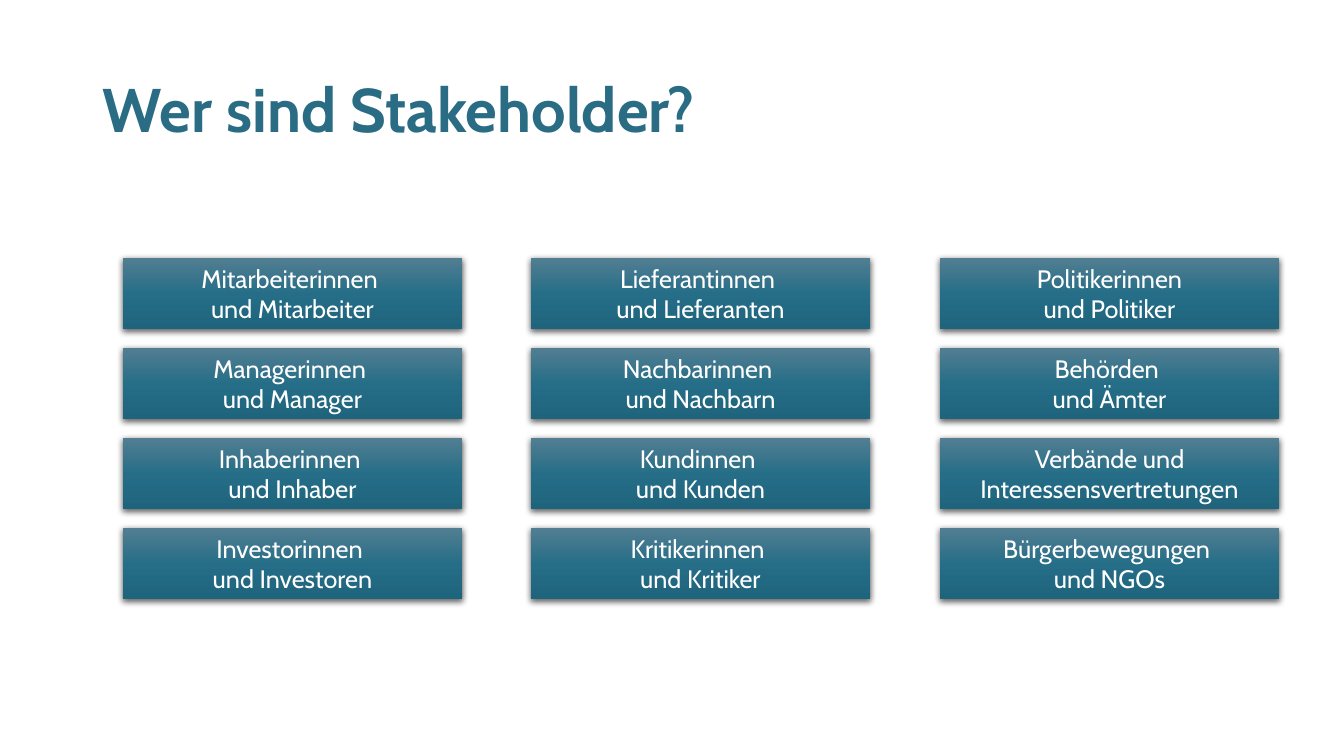
import dataclasses

import lxml.etree
import pptx
import pptx.dml.color
import pptx.enum.shapes
import pptx.enum.text
import pptx.oxml.ns
import pptx.util

ALIGN = pptx.enum.text.PP_ALIGN
FIT = pptx.enum.text.MSO_AUTO_SIZE
PX = 914400 / 100.8


@dataclasses.dataclass(frozen=True)
class Theme:
    font: str = "Cabin"
    head: str = "2A6C83"
    label: str = "FFFFFF"
    shade: str = "000000"
    ramp: tuple = ((0, "527E92"), (50, "266E87"), (100, "1D647C"))
    head_size: int = 44
    label_size: int = 18


def emu(*px):
    return [round(n * PX) for n in px]


def add_node(parent, tag, **attrs):
    name = pptx.oxml.ns.qn(tag)
    return lxml.etree.SubElement(parent, name, {k: str(v) for k, v in attrs.items()})


def write(frame, text, size, color, font, bold=False, align=ALIGN.LEFT,
          spacing=None, fit=FIT.NONE):
    """Fill a frame; \\n starts a paragraph, \\v breaks a line."""
    frame.text = text
    frame.word_wrap = True
    frame.auto_size = fit
    frame.vertical_anchor = pptx.enum.text.MSO_ANCHOR.MIDDLE
    for para in frame.paragraphs:
        para.alignment = align
        para.line_spacing = spacing
        for run in para.runs:
            run.font.name = font
            run.font.size = pptx.util.Pt(size)
            run.font.bold = bold
            run.font.color.rgb = pptx.dml.color.RGBColor.from_string(color)


class Deck:
    def __init__(self, theme):
        self.theme = theme
        self.prs = pptx.Presentation()
        self.prs.slide_width, self.prs.slide_height = emu(1344, 756)
        self.slide = self.prs.slides.add_slide(self.prs.slide_layouts[6])

    def title(self, text, *area):
        box = self.slide.shapes.add_textbox(*emu(*area))
        write(box.text_frame, text, self.theme.head_size, self.theme.head,
              self.theme.font, bold=True, spacing=0.9)

    def card(self, text, *area):
        kind = pptx.enum.shapes.MSO_SHAPE.RECTANGLE
        box = self.slide.shapes.add_shape(kind, *emu(*area))
        box.line.fill.background()
        self.blend(box)
        self.shadow(box)
        write(box.text_frame, text, self.theme.label_size, self.theme.label,
              self.theme.font, align=ALIGN.CENTER, fit=FIT.SHAPE_TO_FIT_TEXT)

    def blend(self, box):
        """Colour a shape from top to bottom with the theme's ramp."""
        box.fill.gradient()
        box.fill.gradient_angle = 270
        stops = box._element.spPr.find(".//" + pptx.oxml.ns.qn("a:gsLst"))
        for stop in list(stops):
            stops.remove(stop)
        for place, color in self.theme.ramp:
            stop = add_node(stops, "a:gs", pos=place * 1000)
            add_node(stop, "a:srgbClr", val=color)

    def shadow(self, box):
        box.shadow.inherit = False
        effects = box._element.spPr.find(pptx.oxml.ns.qn("a:effectLst"))
        outer = add_node(effects, "a:outerShdw", blurRad=pptx.util.Pt(4.5),
                         dist=pptx.util.Pt(1.5), dir=90 * 60000,
                         algn="ctr", rotWithShape=0)
        color = add_node(outer, "a:srgbClr", val=self.theme.shade)
        add_node(color, "a:alpha", val=63000)


GROUPS = (
    ("Mitarbeiterinnen \vund Mitarbeiter", "Managerinnen \vund Manager",
     "Inhaberinnen \vund Inhaber", "Investorinnen \vund Investoren"),
    ("Lieferantinnen \vund Lieferanten", "Nachbarinnen \nund Nachbarn",
     "Kundinnen \nund Kunden", "Kritikerinnen \vund Kritiker"),
    ("Politikerinnen\vund Politiker", "Behörden \vund Ämter",
     "Verbände und Interessensvertretungen", "Bürgerbewegungen \vund NGOs"),
)


def main():
    deck = Deck(Theme())
    deck.title("Wer sind Stakeholder?", 93, 40, 1159, 146)
    left, top, width, height = 123, 258, 339, 71
    for col, group in enumerate(GROUPS):
        for row, text in enumerate(group):
            deck.card(text, left + col * 817 // 2, top + row * 90, width, height)
    deck.prs.save("out.pptx")


if __name__ == "__main__":
    main()
